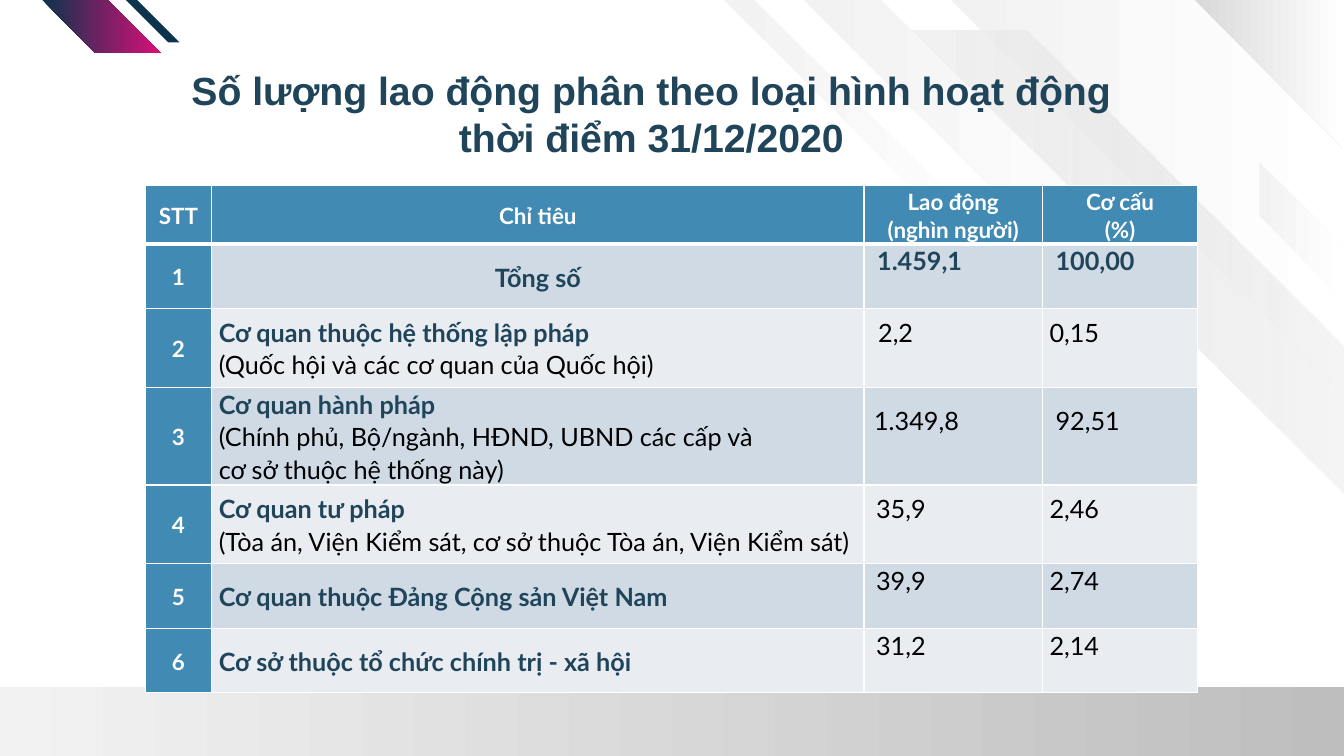
from dataclasses import dataclass

from lxml import etree
from pptx import Presentation
from pptx import util as u
from pptx.dml.color import RGBColor
from pptx.enum import shapes, text
from pptx.oxml.ns import qn

COLORS = {
    "white": "FFFFFF", "black": "000000", "navy": "0C344C", "title": "20455A",
    "pink": "D80F79", "header": "418AB3", "band": "CFDAE5", "pale": "E9EDF2",
    "mist": "F2F2F2", "silver": "D9D9D9", "grey": "BFBEBE",
}
CENTER, LEFT = text.PP_ALIGN.CENTER, text.PP_ALIGN.LEFT
COLUMN_WIDTHS = (0.66, 6.47, 1.77, 1.54)
HEADER_HEIGHT = 0.58
HEADINGS = (("STT",), ("Chỉ tiêu",), ("Lao động", "(nghìn người)"), ("Cơ cấu", "(%)"))
SIDE_INSET = 0.07
VALUE_LIFT = 0.32


@dataclass(frozen=True)
class Ribbon:
    """A flat or left-to-right shaded outline of the backdrop."""
    points: tuple[tuple[float, float], ...]
    colors: tuple[str, ...]
    end_alpha: int = 100


@dataclass(frozen=True)
class Sector:
    """One row of the employment table."""
    name: str
    details: tuple[str, ...]
    workers: str
    share: str
    height: float
    workers_inset: float = 0.12
    share_inset: float = SIDE_INSET
    total: bool = False


RIBBONS = (
    Ribbon(((13.33, 0), (9.43, 0), (13.33, 3.9)), ("mist", "white")),
    Ribbon(((13.33, 3.44), (10.19, 0.3), (8.71, 0.3), (13.33, 4.91)), ("mist", "silver"), 26),
    Ribbon(((13.33, 2.45), (12.49, 1.61), (12.49, 2.14), (13.33, 2.98)), ("mist", "white")),
    Ribbon(((11.57, 2.82), (8.74, 0), (7.97, 0), (10.8, 2.82)), ("mist", "white")),
    Ribbon(((13.33, 0), (11.85, 0), (13.33, 1.48)), ("silver", "white")),
    Ribbon(((7.48, 0), (10.01, 2.53), (10.01, 2.82), (7.18, 0)), ("mist", "white")),
    Ribbon(((0.42, 0), (0.95, 0.53), (1.6, 0.53), (1.07, 0)), ("navy", "pink")),
    Ribbon(((1.25, 0), (1.67, 0.42), (1.78, 0.42), (1.36, 0)), ("navy",)),
)
SECTORS = (
    Sector("Tổng số", (), "1.459,1", "100,00", 0.64, 0.13, 0.13, True),
    Sector("Cơ quan thuộc hệ thống lập pháp", ("(Quốc hội và các cơ quan của Quốc hội)",),
           "2,2", "0,15", 0.78, 0.14),
    Sector("Cơ quan hành pháp",
           ("(Chính phủ, Bộ/ngành, HĐND, UBND các cấp và", "cơ sở thuộc hệ thống này)"),
           "1.349,8", "92,51", 0.97, 0.1, 0.13),
    Sector("Cơ quan tư pháp",
           ("(Tòa án, Viện Kiểm sát, cơ sở thuộc Tòa án, Viện Kiểm sát)",),
           "35,9", "2,46", 0.78),
    Sector("Cơ quan thuộc Đảng Cộng sản Việt Nam", (), "39,9", "2,74", 0.64),
    Sector("Cơ sở thuộc tổ chức chính trị - xã hội", (), "31,2", "2,14", 0.64),
)


def rgb(name: str) -> RGBColor:
    """Return a palette colour."""
    return RGBColor.from_string(COLORS[name])


def paint(shape, colors: tuple[str, ...], end_alpha: int = 100) -> None:
    """Fill a backdrop shape and remove its outline and shadow."""
    shape.shadow.inherit = False
    shape.line.fill.background()
    if len(colors) == 1:
        shape.fill.solid()
        shape.fill.fore_color.rgb = rgb(colors[0])
        return
    shape.fill.gradient()
    shape.fill.gradient_angle = 0
    for stop, color, position in zip(shape.fill.gradient_stops, colors, (0, 1)):
        stop.color.rgb = rgb(color)
        stop.position = position
    if end_alpha < 100:
        end_color = list(shape._element.spPr.iter(qn("a:srgbClr")))[-1]
        etree.SubElement(end_color, qn("a:alpha"), val=str(end_alpha * 1000))


def draw_ribbon(slide, ribbon: Ribbon) -> None:
    """Draw one backdrop outline."""
    corners = [(u.Inches(x), u.Inches(y)) for x, y in ribbon.points]
    builder = slide.shapes.build_freeform(*corners[0])
    builder.add_line_segments(corners[1:], close=True)
    paint(builder.convert_to_shape(), ribbon.colors, ribbon.end_alpha)


def style(paragraph, size: int, color: str, bold: bool, align, font: str = "Lato") -> None:
    """Format a whole paragraph."""
    paragraph.alignment = align
    paragraph.font.size = u.Pt(size)
    paragraph.font.name = font
    paragraph.font.bold = bold
    paragraph.font.color.rgb = rgb(color)


def write_title(slide) -> None:
    """Place the two-line title in front of the backdrop."""
    title = slide.shapes.title
    slide.shapes._spTree.append(title._element)
    title.left, title.top = u.Inches(0.9), u.Inches(0.66)
    title.width, title.height = u.Inches(11.12), u.Inches(0.94)
    frame = title.text_frame
    frame.text = "Số lượng lao động phân theo loại hình hoạt động\nthời điểm 31/12/2020"
    frame.word_wrap = True
    frame.auto_size = text.MSO_AUTO_SIZE.NONE
    frame.vertical_anchor = text.MSO_ANCHOR.TOP
    frame.margin_left = frame.margin_right = frame.margin_top = frame.margin_bottom = 0
    for paragraph in frame.paragraphs:
        style(paragraph, 28, "title", True, CENTER, "Arial")
        paragraph.line_spacing = 1.0
        paragraph.space_before = u.Pt(0)


def fill_cell(cell, lines: tuple[str, ...], fill: str, size: int, color: str, bold: bool,
              align, left: float = SIDE_INSET, bottom: float = 0,
              top_rule: int = 1, bottom_rule: int = 1) -> None:
    """Write, border and colour one table cell."""
    cell.text = "\n".join(lines)
    cell.vertical_anchor = text.MSO_ANCHOR.MIDDLE
    cell.margin_left, cell.margin_right = u.Inches(left), u.Inches(SIDE_INSET)
    cell.margin_top, cell.margin_bottom = 0, u.Inches(bottom)
    for paragraph in cell.text_frame.paragraphs:
        style(paragraph, size, color, bold, align)
        paragraph.line_spacing = 1.07
    properties = cell._tc.get_or_add_tcPr()
    for side, width in (("L", 1), ("R", 1), ("T", top_rule), ("B", bottom_rule)):
        rule = etree.SubElement(properties, qn(f"a:ln{side}"), w=str(u.Pt(width)))
        solid = etree.SubElement(rule, qn("a:solidFill"))
        etree.SubElement(solid, qn("a:srgbClr"), val=COLORS["white"])
    cell.fill.solid()
    cell.fill.fore_color.rgb = rgb(fill)


def draw_table(slide) -> None:
    """Draw the employment table."""
    heights = (HEADER_HEIGHT, *(sector.height for sector in SECTORS))
    table = slide.shapes.add_table(
        len(heights), len(COLUMN_WIDTHS), u.Inches(1.44), u.Inches(1.84),
        u.Inches(sum(COLUMN_WIDTHS)), u.Inches(sum(heights))).table
    table.first_row = table.horz_banding = False
    for column, width in zip(table.columns, COLUMN_WIDTHS):
        column.width = u.Inches(width)
    for row, height in zip(table.rows, heights):
        row.height = u.Inches(height)
    for index, heading in enumerate(HEADINGS):
        fill_cell(table.cell(0, index), heading, "header", 16, "white", True, CENTER,
                  bottom_rule=3)
    for number, sector in enumerate(SECTORS, 1):
        top_rule = 3 if number == 1 else 1
        fill = "band" if number % 2 else "pale"
        fill_cell(table.cell(number, 0), (str(number),), "header", 16, "white", True, CENTER,
                  top_rule=top_rule)
        label = table.cell(number, 1)
        fill_cell(label, (sector.name, *sector.details), fill, 18, "title", True,
                  CENTER if sector.total else LEFT, top_rule=top_rule)
        for detail in label.text_frame.paragraphs[1:]:
            style(detail, 18, "black", False, LEFT)
        values = ((sector.workers, sector.workers_inset), (sector.share, sector.share_inset))
        for index, (value, inset) in enumerate(values, 2):
            fill_cell(table.cell(number, index), (value,), fill, 18,
                      "title" if sector.total else "black", sector.total, LEFT,
                      inset, VALUE_LIFT, top_rule)


def main() -> None:
    """Build and save the slide."""
    deck = Presentation()
    deck.slide_width, deck.slide_height = u.Inches(13.33), u.Inches(7.5)
    slide = deck.slides.add_slide(deck.slide_layouts[5])
    floor = slide.shapes.add_shape(shapes.MSO_SHAPE.RECTANGLE, 0, u.Inches(6.82),
                                   u.Inches(13.33), u.Inches(0.68))
    paint(floor, ("mist", "grey"))
    for ribbon in RIBBONS:
        draw_ribbon(slide, ribbon)
    write_title(slide)
    draw_table(slide)
    deck.save("out.pptx")


if __name__ == "__main__":
    main()
